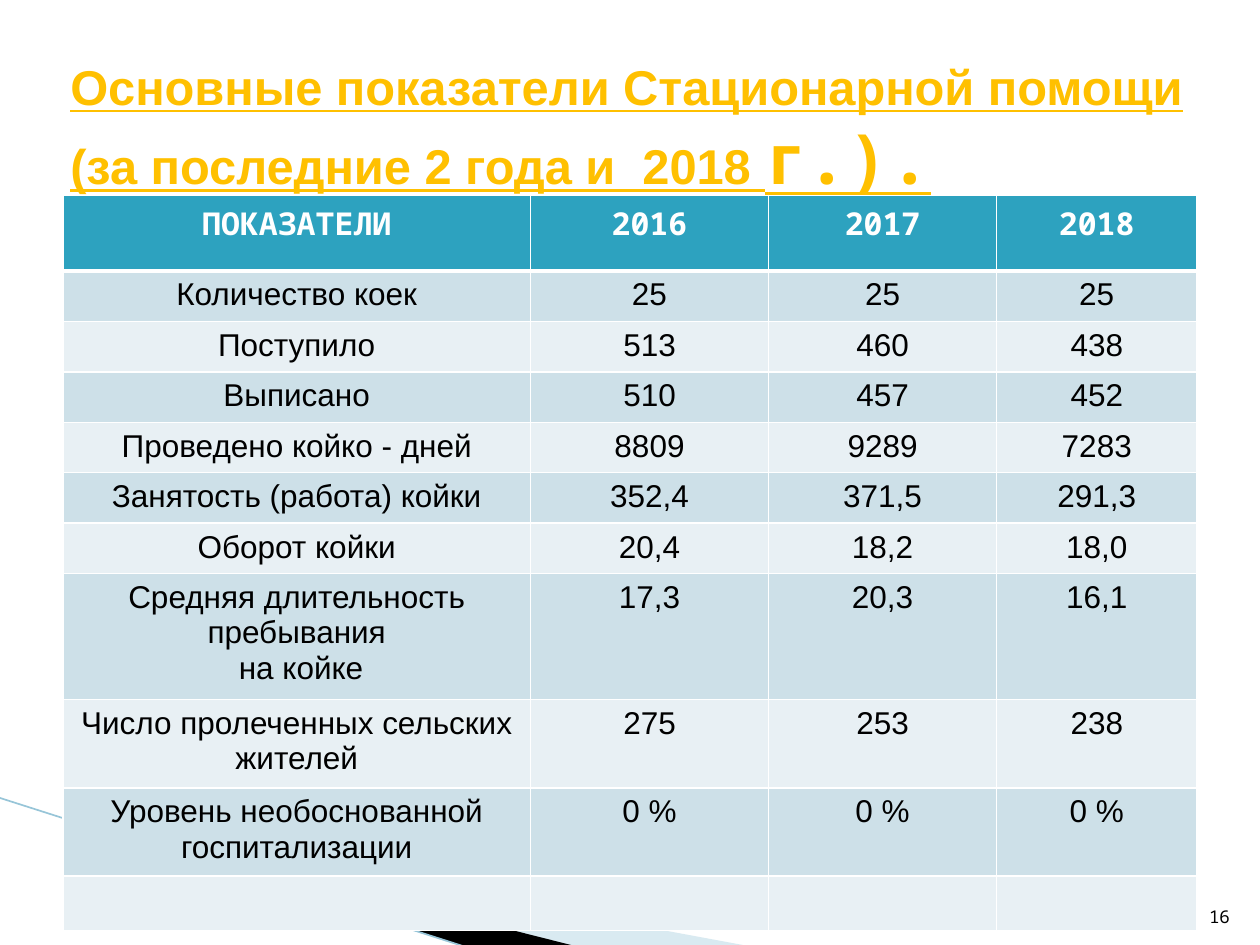
import pptx
import pptx.util
import pptx.dml.color
import pptx.enum.shapes
import pptx.enum.text
import pptx.oxml
import pptx.oxml.ns
from dataclasses import dataclass

Inches, Pt = pptx.util.Inches, pptx.util.Pt
RGB = pptx.dml.color.RGBColor.from_string
ALIGN = pptx.enum.text.PP_ALIGN
ANCHOR = pptx.enum.text.MSO_ANCHOR


@dataclass(frozen=True)
class Theme:
    sans: str = "Arial"
    mono: str = "Noto Sans Mono"
    gold: str = "FFC000"
    head: str = "2DA2BF"
    odd: str = "CDE0E8"
    even: str = "E8F0F4"
    pale: str = "A0CBDC"
    edge: str = "97C5D8"
    black: str = "000000"
    white: str = "FFFFFF"
    title: float = 27.9
    big: float = 39.6
    body: float = 18
    small: float = 10


T = Theme()

HEADS = ["ПОКАЗАТЕЛИ", "2016", "2017", "2018"]
DATA = [
    ["Количество коек", "25", "25", "25"],
    ["Поступило", "513", "460", "438"],
    ["Выписано", "510", "457", "452"],
    ["Проведено койко - дней", "8809", "9289", "7283"],
    ["Занятость (работа) койки", "352,4", "371,5", "291,3"],
    ["Оборот койки", "20,4", "18,2", "18,0"],
    ["Средняя длительность пребывания\n на койке", "17,3", "20,3", "16,1"],
    ["Число пролеченных сельских жителей", "275", "253", "238"],
    ["Уровень необоснованной госпитализации", "0 %", "0 %", "0 %"],
    ["", "", "", ""],
]
COLS = [3.71, 1.89, 1.81, 1.59]
ROWS = [0.6] + [0.4] * 6 + [0.41] * 3 + [0.43]


def style(font, color, **form):
    for key, value in form.items():
        setattr(font, key, value)
    font.color.rgb = RGB(color)


def add_xml(parent, tag, **attrs):
    node = parent.makeelement(pptx.oxml.ns.qn(tag), attrs)
    parent.append(node)
    return node


def add_wedge(slide, points, color, alpha=None):
    spots = [(Inches(x), Inches(y)) for x, y in points]
    pen = slide.shapes.build_freeform(*spots[0])
    pen.add_line_segments(spots[1:], close=True)
    shape = pen.convert_to_shape()
    shape.shadow.inherit = False
    shape.fill.solid()
    shape.fill.fore_color.rgb = RGB(color)
    shape.line.fill.background()
    if alpha:
        paint = shape.fill._xPr.find(".//" + pptx.oxml.ns.qn("a:srgbClr"))
        add_xml(paint, "a:alpha", val=str(alpha * 1000))


def add_line(slide, start, end, color, width):
    kind = pptx.enum.shapes.MSO_CONNECTOR.STRAIGHT
    line = slide.shapes.add_connector(kind, *map(Inches, start + end))
    line.line.color.rgb = RGB(color)
    line.line.width = Pt(width)
    add_xml(line._element.spPr, "a:effectLst")


def add_text(slide, place, runs, anchor, align):
    box = slide.shapes.add_textbox(*map(Inches, place))
    frame = box.text_frame
    frame.word_wrap = True
    frame.vertical_anchor = anchor
    para = frame.paragraphs[0]
    para.alignment = align
    for text, color, form in runs:
        run = para.add_run()
        run.text = text
        style(run.font, color, **form)


def add_edges(cell, top, base):
    props = cell._tc.get_or_add_tcPr()
    for side, width in zip("LRTB", (1, 1, top, base)):
        edge = add_xml(props, "a:ln" + side, w=str(Pt(width)))
        paint = add_xml(edge, "a:solidFill")
        add_xml(paint, "a:srgbClr", val=T.white)


def fill_cell(cell, text, row):
    add_edges(cell, 3 if row == 1 else 1, 3 if row == 0 else 1)
    back = T.head if row == 0 else T.odd if row % 2 else T.even
    cell.fill.solid()
    cell.fill.fore_color.rgb = RGB(back)
    cell.text = text
    top = row == 0
    form = {"name": T.mono if top else T.sans, "size": Pt(T.body), "bold": top}
    for para in cell.text_frame.paragraphs:
        para.alignment = ALIGN.CENTER
        style(para.font, T.white if top else T.black, **form)
        for run in para.runs:
            style(run.font, T.white if top else T.black, **form)


def add_grid(slide, left, top):
    rows = [HEADS] + DATA
    place = map(Inches, (left, top, sum(COLS), sum(ROWS)))
    grid = slide.shapes.add_table(len(rows), len(COLS), *place).table
    for col, width in zip(grid.columns, COLS):
        col.width = Inches(width)
    for r, (line, height) in enumerate(zip(rows, ROWS)):
        grid.rows[r].height = Inches(height)
        for c, text in enumerate(line):
            fill_cell(grid.cell(r, c), text, r)


def main():
    deck = pptx.Presentation()
    deck.slide_width, deck.slide_height = Inches(10), Inches(7.5)
    slide = deck.slides.add_slide(deck.slide_layouts[6])

    # Corner decoration
    add_wedge(slide, [(0.55, 6.51), (5.95, 7.51), (4.56, 7.51), (0.55, 6.5)],
              T.pale, 40)
    add_wedge(slide, [(0.53, 6.49), (4.57, 7.51), (3.72, 7.52), (0.54, 6.5)],
              T.black)
    add_line(slide, (-0.01, 6.33), (3.71, 7.52), T.edge, 0.95)

    # Title
    bold = {"bold": True, "underline": True}
    add_text(slide, (0.46, 0.57, 9.53, 0.89), [
        ("Основные показатели Стационарной помощи "
         "(за последние 2 года и  2018 ", T.gold,
         {"name": T.sans, "size": Pt(T.title), **bold}),
        ("г.).", T.gold, {"name": T.mono, "size": Pt(T.big), **bold}),
    ], ANCHOR.MIDDLE, ALIGN.LEFT)

    # Table of figures
    add_grid(slide, 0.5, 1.55)

    # Page number
    add_text(slide, (9.46, 7.01, 0.4, 0.4),
             [("16", T.black, {"name": T.mono, "size": Pt(T.small)})],
             ANCHOR.BOTTOM, ALIGN.RIGHT)

    deck.save("out.pptx")


if __name__ == "__main__":
    main()
